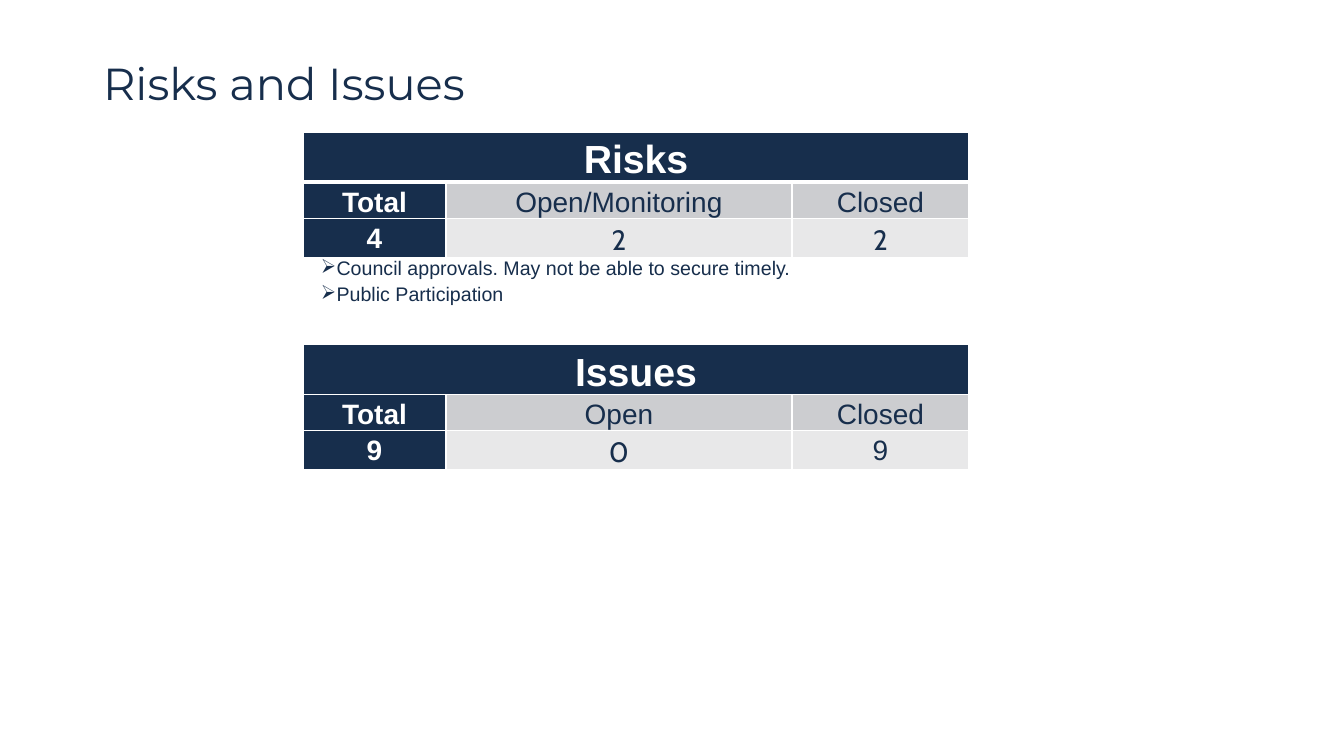
from dataclasses import dataclass

from lxml.etree import SubElement
from pptx import Presentation
from pptx.dml.color import RGBColor
from pptx.enum.text import MSO_ANCHOR, PP_ALIGN
from pptx.oxml.ns import qn
from pptx.util import Emu, Pt


@dataclass(frozen=True)
class Theme:
    """Colours, fonts and type sizes of the slide."""
    navy: str = "172E4C"
    white: str = "FFFFFF"
    label_grey: str = "CCCDD0"
    count_grey: str = "E8E8E9"
    heading_font: str = "Montserrat"
    body_font: str = "Arial"
    count_font: str = "Cabin"
    title_size: int = 32
    band_size: int = 28
    count_size: int = 20
    note_size: int = 14


THEME = Theme()
EMU_PER_PX = 914400 / 100.8
COLUMN_WIDTHS = (143, 346, 177)
ROW_HEIGHTS = (50, 36, 39, 87, 50, 36, 39, 73)
CELL_MARGIN = 18
SECTIONS = (
    ("Risks", ("Total", "Open/Monitoring", "Closed"), ("4", "2", "2"),
     (THEME.count_font, THEME.count_font), 3,
     ("Council approvals. May not be able to secure timely.", "Public Participation")),
    ("Issues", ("Total", "Open", "Closed"), ("9", "0", "9"),
     (THEME.count_font, THEME.body_font), 1, ()),
)


def px(length):
    """Turn whole pixels into EMU."""
    return Emu(round(length * EMU_PER_PX))


def add_run(paragraph, text, size, color, font=THEME.body_font, bold=False):
    """Append one formatted run."""
    run = paragraph.add_run()
    run.text = text
    run.font.size = Pt(size)
    run.font.name = font
    run.font.bold = bold
    run.font.color.rgb = RGBColor.from_string(color)


def style_cell(cell, fill, top=1, bottom=1):
    """Set the margins, white borders and fill of a cell."""
    cell.margin_left = cell.margin_right = px(CELL_MARGIN)
    cell.margin_top = cell.margin_bottom = 0
    properties = cell._tc.get_or_add_tcPr()
    for side, width in (("L", 1), ("R", 1), ("T", top), ("B", bottom)):
        line = SubElement(properties, qn(f"a:ln{side}"), w=str(Pt(width)))
        SubElement(SubElement(line, qn("a:solidFill")), qn("a:srgbClr"), val=THEME.white)
    cell.fill.solid()
    cell.fill.fore_color.rgb = RGBColor.from_string(fill)


def write_centred(cell, text, size, color, font=THEME.body_font, bold=False):
    """Write one centred line in a cell."""
    paragraph = cell.text_frame.paragraphs[0]
    paragraph.alignment = PP_ALIGN.CENTER
    paragraph.line_spacing = 1.15
    paragraph.space_after = Pt(3)
    add_run(paragraph, text, size, color, font, bold)


def write_notes(cell, notes):
    """Write arrow-bulleted notes in a cell."""
    frame = cell.text_frame
    for index, note in enumerate(notes):
        paragraph = frame.add_paragraph() if index else frame.paragraphs[0]
        properties = paragraph._p.get_or_add_pPr()
        properties.set("marL", "0")
        properties.set("indent", "0")
        SubElement(properties, qn("a:buChar"), char="➢")
        paragraph.space_after = Pt(3)
        add_run(paragraph, note, THEME.note_size, THEME.navy)


def merge_row(table, row, fill, bottom=1):
    """Join a whole row into one styled cell."""
    last = len(COLUMN_WIDTHS) - 1
    for column in range(last + 1):
        style_cell(table.cell(row, column), fill, bottom=bottom)
    table.cell(row, 0).merge(table.cell(row, last))
    return table.cell(row, 0)


def fill_section(table, first_row, section):
    """Fill the heading, labels, counts and notes of a section."""
    heading, labels, counts, count_fonts, rule, notes = section
    band = merge_row(table, first_row, THEME.navy, bottom=rule)
    write_centred(band, heading, THEME.band_size, THEME.white, bold=True)
    label_fonts = (THEME.body_font,) * len(labels)
    rows = (
        (labels, label_fonts, THEME.label_grey, rule),
        (counts, (THEME.body_font, *count_fonts), THEME.count_grey, 1),
    )
    for row, (texts, fonts, grey, top) in enumerate(rows, first_row + 1):
        for column, (text, font) in enumerate(zip(texts, fonts)):
            is_total = column == 0
            cell = table.cell(row, column)
            style_cell(cell, THEME.navy if is_total else grey, top=top)
            write_centred(cell, text, THEME.count_size,
                          THEME.white if is_total else THEME.navy, font, is_total)
    write_notes(merge_row(table, first_row + 3, THEME.white), notes)


def add_register(slide, left, top):
    """Add the table of risks and issues."""
    table = slide.shapes.add_table(
        len(ROW_HEIGHTS), len(COLUMN_WIDTHS), px(left), px(top),
        px(sum(COLUMN_WIDTHS)), px(sum(ROW_HEIGHTS))).table
    table.first_row = table.horz_banding = False
    for column, width in zip(table.columns, COLUMN_WIDTHS):
        column.width = px(width)
    for row, height in zip(table.rows, ROW_HEIGHTS):
        row.height = px(height)
    rows_per_section = len(ROW_HEIGHTS) // len(SECTIONS)
    for index, section in enumerate(SECTIONS):
        fill_section(table, index * rows_per_section, section)


def set_title(slide, text, left, top, width, height):
    """Place and format the slide title."""
    title = slide.shapes.title
    title.left, title.top, title.width, title.height = map(px, (left, top, width, height))
    title.text_frame.vertical_anchor = MSO_ANCHOR.MIDDLE
    title.text_frame.word_wrap = True
    paragraph = title.text_frame.paragraphs[0]
    paragraph.alignment = PP_ALIGN.LEFT
    paragraph.line_spacing = 0.9
    add_run(paragraph, text, THEME.title_size, THEME.navy, THEME.heading_font)


def main():
    """Build and save the slide."""
    deck = Presentation()
    deck.slide_width, deck.slide_height = px(1344), px(756)
    slide = deck.slides.add_slide(deck.slide_layouts[5])
    add_register(slide, 303, 132)
    set_title(slide, "Risks and Issues", 93, 55, 544, 61)
    deck.save("out.pptx")


if __name__ == "__main__":
    main()
